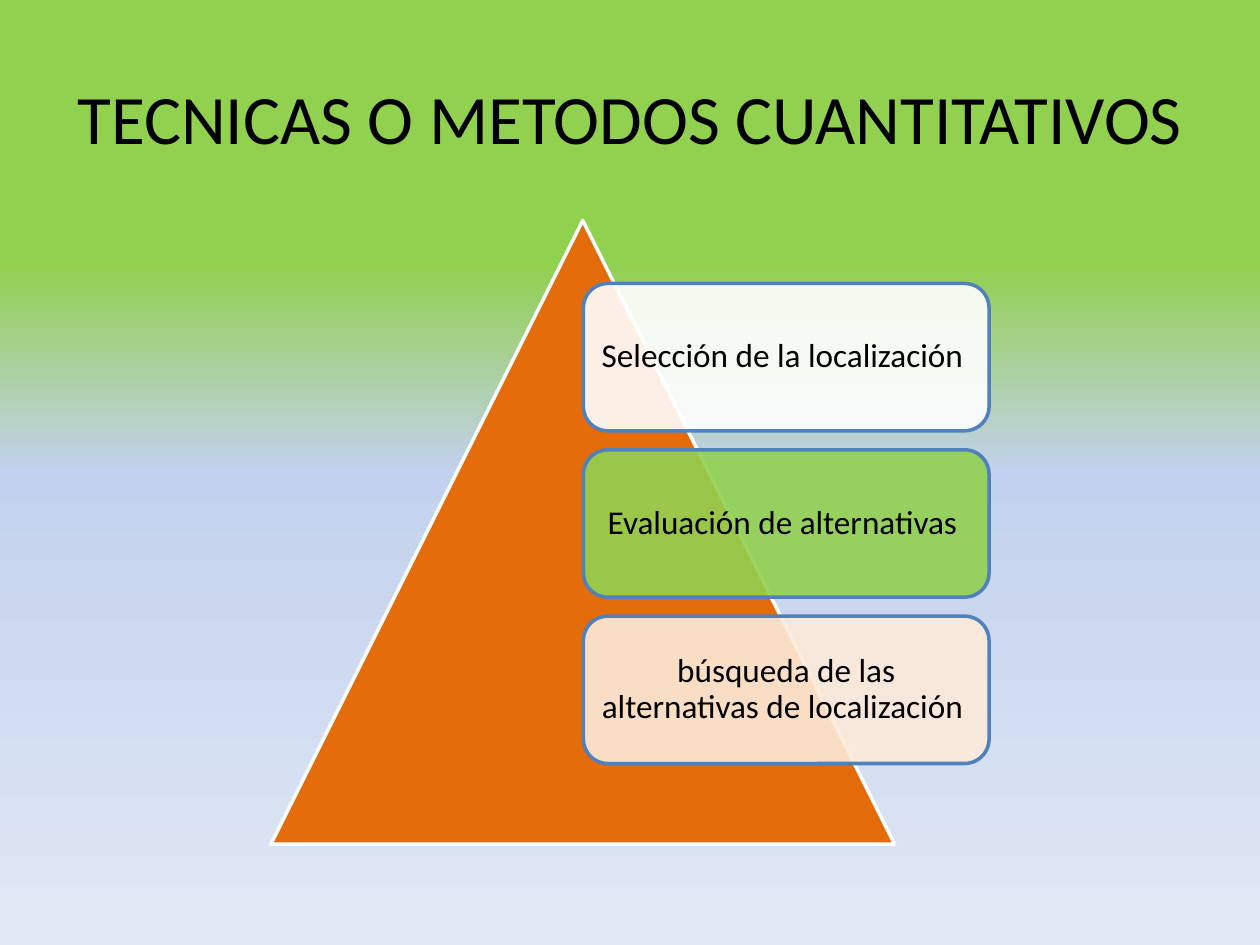
from copy import deepcopy

from pptx import Presentation
from pptx.dml.color import RGBColor
from pptx.enum.shapes import MSO_SHAPE as Preset
from pptx.enum.text import MSO_ANCHOR as Anchor, PP_ALIGN as Align
from pptx.oxml.ns import qn
from pptx.oxml.xmlchemy import OxmlElement
from pptx.util import Inches, Pt

BLACK = RGBColor(0x00, 0x00, 0x00)
WHITE = RGBColor(0xFF, 0xFF, 0xFF)
GREEN = RGBColor(0x92, 0xD0, 0x50)
ORANGE = RGBColor(0xE4, 0x6C, 0x0A)
PEACH = RGBColor(0xFD, 0xEA, 0xDA)
BLUE = RGBColor(0x4F, 0x81, 0xBD)
SKY = RGBColor(0xC2, 0xD1, 0xED)
PALE_SKY = RGBColor(0xE1, 0xE8, 0xF5)


class SlideBuilder:
    font = "Calibri"
    title_size = Pt(39.6)
    card_size = Pt(19)
    line_width = Pt(2)
    card_inset = Inches(0.08)

    def __init__(self, slide):
        self.slide = slide

    def background(self, stops):
        fill = self.slide.background.fill
        fill.gradient()
        fill.gradient_angle = 270
        stop_list = next(self.slide.element.iter(qn("a:gsLst")))
        while len(stop_list) < len(stops):
            stop_list.append(deepcopy(stop_list[0]))
        for stop, (position, color) in zip(fill.gradient_stops, stops):
            stop.position = position
            stop.color.rgb = color

    def set_text(self, shape, text, size):
        text_frame = shape.text_frame
        text_frame.word_wrap = True
        text_frame.vertical_anchor = Anchor.MIDDLE
        text_frame.text = text
        paragraph = text_frame.paragraphs[0]
        paragraph.alignment = Align.CENTER
        font = paragraph.runs[0].font
        font.name = self.font
        font.size = size
        font.color.rgb = BLACK
        return paragraph

    def title(self, text, left, top, width, height):
        box = self.slide.shapes.add_textbox(
            Inches(left), Inches(top), Inches(width), Inches(height))
        self.set_text(box, text, self.title_size)

    def shape(self, preset, left, top, width, height, fill, line):
        shape = self.slide.shapes.add_shape(
            preset, Inches(left), Inches(top), Inches(width), Inches(height))
        shape.shadow.inherit = False
        shape.fill.solid()
        shape.fill.fore_color.rgb = fill
        shape.line.color.rgb = line
        shape.line.width = self.line_width
        return shape

    def card(self, text, left, top, width, height, fill, opacity=90):
        card = self.shape(Preset.ROUNDED_RECTANGLE, left, top, width, height, fill, BLUE)
        alpha = OxmlElement("a:alpha")
        alpha.set("val", str(opacity * 1000))
        next(card.element.spPr.iter(qn("a:srgbClr"))).append(alpha)
        text_frame = card.text_frame
        text_frame.margin_left = text_frame.margin_right = self.card_inset
        text_frame.margin_top = text_frame.margin_bottom = self.card_inset
        paragraph = self.set_text(card, text, self.card_size)
        paragraph.line_spacing = 0.9


def main():
    presentation = Presentation()
    presentation.slide_width = Inches(10)
    presentation.slide_height = Inches(7.5)
    builder = SlideBuilder(presentation.slides.add_slide(presentation.slide_layouts[6]))

    builder.background([(0.28, GREEN), (0.5, SKY), (1, PALE_SKY)])
    builder.title("TECNICAS O METODOS CUANTITATIVOS", 0.5, 0.3, 9, 1.25)
    builder.shape(Preset.ISOSCELES_TRIANGLE, 2.15, 1.75, 4.95, 4.95, ORANGE, WHITE)

    cards = [
        ("Selección de la localización ", WHITE),
        ("Evaluación de alternativas ", GREEN),
        ("búsqueda de las alternativas de localización ", PEACH),
    ]
    first_top, height, gap = 2.25, 1.17, 0.15
    for index, (text, fill) in enumerate(cards):
        builder.card(text, 4.63, first_top + index * (height + gap), 3.22, height, fill)

    presentation.save("out.pptx")


if __name__ == "__main__":
    main()
